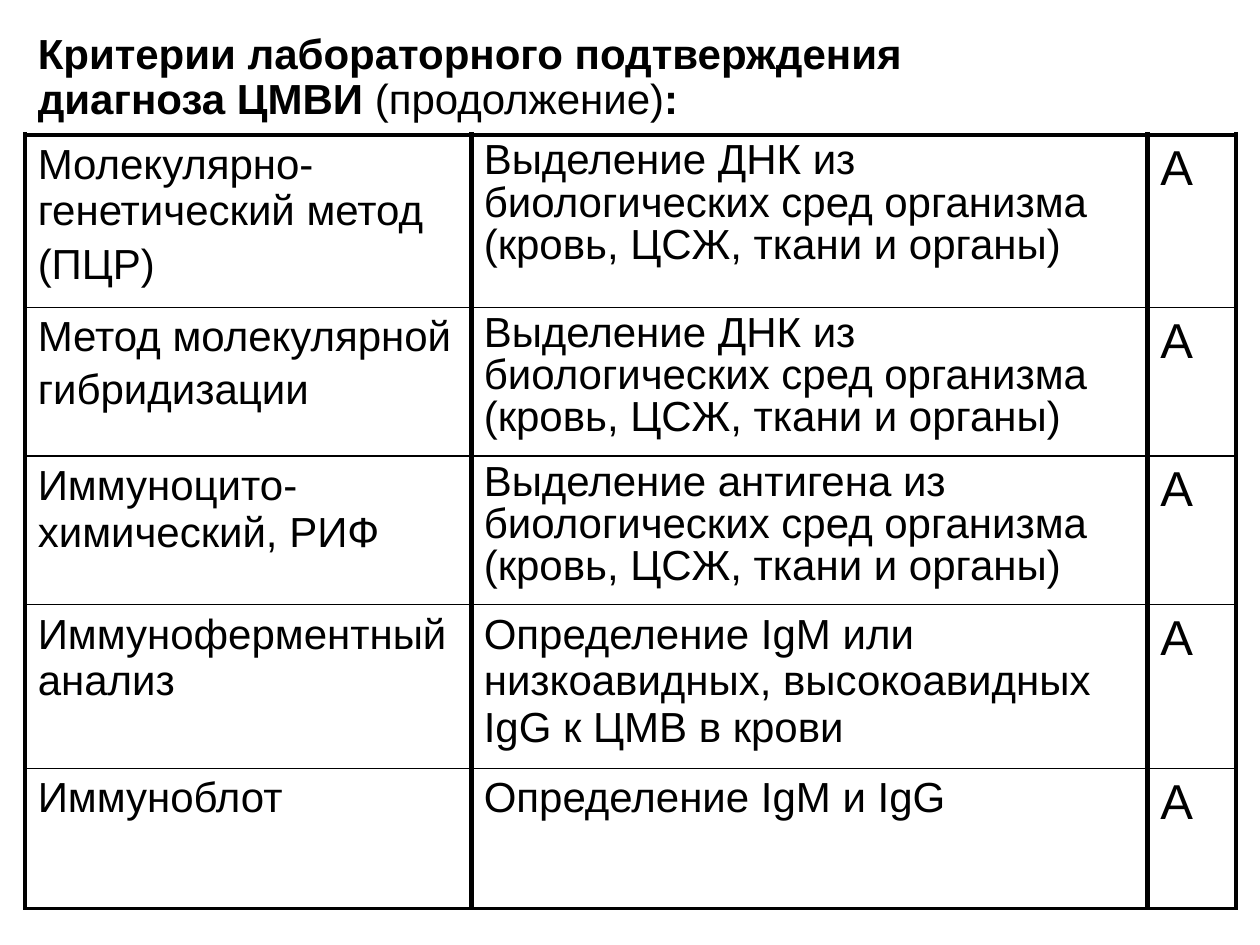
from pptx import Presentation
from pptx.dml.color import RGBColor
from pptx.enum import text
from pptx.oxml import parse_xml
from pptx.oxml.ns import nsdecls
from pptx.util import Inches, Pt

# Content
FONT, INK = "Arial", "000000"
TITLE = [
    [("Критерии лабораторного подтверждения", True)],
    [("диагноза ЦМВИ ", True), ("(продолжение)", False), (":", True)],
]
SAMPLES = "биологических сред организма (кровь, ЦСЖ, ткани и органы)"
# method, finding, grade, row height, tight line spacing, large closing space
CRITERIA = [
    ("Молекулярно-генетический метод (ПЦР)", f"Выделение ДНК из {SAMPLES}", "А", 1.37, True, True),
    ("Метод молекулярной гибридизации", f"Выделение ДНК из {SAMPLES}", "А", 1.18, True, True),
    ("Иммуноцито-химический, РИФ", f"Выделение антигена из {SAMPLES}", "А", 1.18, True, False),
    ("Иммуноферментный анализ", "Определение IgM или низкоавидных, высокоавидных IgG к ЦМВ в крови",
     "А", 1.3, False, False),
    ("Иммуноблот", "Определение IgM и IgG", "А", 1.11, False, False),
]
COLUMN_WIDTHS = [3.54, 5.37, 0.7]
BODY_SIZE, GRADE_SIZE = 24, 28
THIN, MEDIUM, THICK = 1, 2.25, 3


def color(hex_value):
    return RGBColor.from_string(hex_value)


def style(font, size):
    font.name, font.size = FONT, Pt(size)
    font.color.rgb = color(INK)


def set_borders(cell, **widths):
    """Draw cell sides, given in the order L, R, T, B."""
    properties = cell._tc.get_or_add_tcPr()
    for index, (side, width) in enumerate(widths.items()):
        properties.insert(index, parse_xml(
            f'<a:ln{side} {nsdecls("a")} w="{Pt(width)}"><a:solidFill>'
            f'<a:srgbClr val="{INK}"/></a:solidFill></a:ln{side}>'))


prs = Presentation()
prs.slide_width, prs.slide_height = Inches(10), Inches(7.5)
slide = prs.slides.add_slide(prs.slide_layouts[5])

# Title
title = slide.shapes.title
title.left, title.top, title.width, title.height = map(Inches, (0.2, 0.21, 8.11, 0.83))
heading = title.text_frame
heading.word_wrap = True
heading.auto_size = text.MSO_AUTO_SIZE.NONE
heading.vertical_anchor = text.MSO_ANCHOR.TOP
for number, pieces in enumerate(TITLE):
    line = heading.add_paragraph() if number else heading.paragraphs[0]
    line.alignment = text.PP_ALIGN.LEFT
    line.line_spacing = 0.9
    style(line.font, BODY_SIZE)
    for words, bold in pieces:
        run = line.add_run()
        run.text, run.font.bold = words, bold

# Table of criteria
height = sum(row[3] for row in CRITERIA)
table = slide.shapes.add_table(
    len(CRITERIA), len(COLUMN_WIDTHS), Inches(0.2), Inches(1.07),
    Inches(sum(COLUMN_WIDTHS)), Inches(height)).table
table.first_row = table.horz_banding = False
for column, width in zip(table.columns, COLUMN_WIDTHS):
    column.width = Inches(width)

last = len(CRITERIA) - 1
for r, (method, finding, grade, row_height, tight, large_end) in enumerate(CRITERIA):
    table.rows[r].height = Inches(row_height)
    for c, words in enumerate((method, finding, grade)):
        cell = table.cell(r, c)
        cell.fill.background()
        set_borders(cell, L=THICK if c else MEDIUM, R=THICK,
                    T=THIN if r else THICK, B=MEDIUM if r == last else THIN)
        paragraph = cell.text_frame.paragraphs[0]
        style(paragraph.font, GRADE_SIZE if c == 2 else BODY_SIZE)
        paragraph.add_run().text = words
        if c == 1 and tight:
            paragraph.line_spacing = 0.9
        if c == 0 and large_end:
            closing = paragraph.add_run()
            closing.text, closing.font.size = " ", Pt(GRADE_SIZE)

prs.save("out.pptx")
